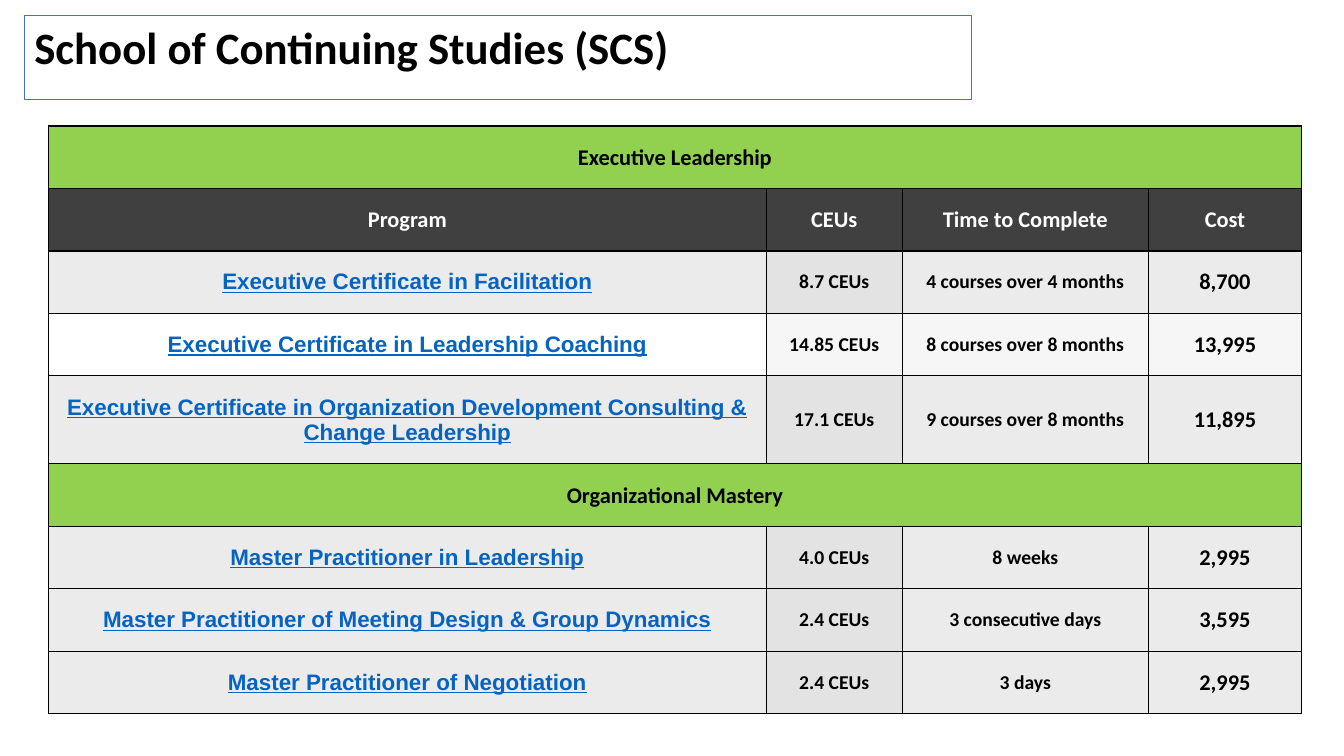
from dataclasses import dataclass

from lxml import etree
from pptx import Presentation
from pptx import util as u
from pptx.dml.color import RGBColor
from pptx.enum import text
from pptx.oxml import ns


@dataclass(frozen=True)
class Theme:
    body_font: str = "Calibri"
    link_font: str = "Arial"
    title_size: int = 32
    table_size: int = 16
    detail_size: int = 14
    ink: str = "000000"
    white: str = "FFFFFF"
    link: str = "0563C1"
    title_line: str = "4472C4"
    section: str = "92D050"
    header: str = "404040"
    band: str = "EBEBEB"
    band_ceus: str = "E3E3E3"
    light: str = "F6F6F6"


HEADERS = ("Program", "CEUs", "Time to Complete", "Cost")
LEADERSHIP = (
    ("Executive Certificate in Facilitation", "8.7 CEUs", "4 courses over 4 months", "8,700"),
    ("Executive Certificate in Leadership Coaching", "14.85 CEUs", "8 courses over 8 months", "13,995"),
    ("Executive Certificate in Organization Development Consulting & Change Leadership",
     "17.1 CEUs", "9 courses over 8 months", "11,895"),
)
MASTERY = (
    ("Master Practitioner in Leadership", "4.0 CEUs", "8 weeks", "2,995"),
    ("Master Practitioner of Meeting Design & Group Dynamics", "2.4 CEUs", "3 consecutive days", "3,595"),
    ("Master Practitioner of Negotiation", "2.4 CEUs", "3 days", "2,995"),
)
ROWS = (
    ("section", ("Executive Leadership",)),
    ("header", HEADERS),
    ("band", LEADERSHIP[0]),
    ("light", LEADERSHIP[1]),
    ("band", LEADERSHIP[2]),
    ("section", ("Organizational Mastery",)),
    *(("band", program) for program in MASTERY),
)
COLUMN_WIDTHS = (7.12, 1.35, 2.44, 1.52)
ROW_HEIGHT = 0.62
TALL_ROW_HEIGHT = 0.83
TALL_ROW = 4
CELL_MARGIN = 0.17


def write_text(frame, content, *, font, size, color, align, underline=False):
    paragraph = frame.paragraphs[0]
    paragraph.alignment = align
    run = paragraph.add_run()
    run.text = content
    run.font.name = font
    run.font.size = u.Pt(size)
    run.font.bold = True
    run.font.underline = underline
    run.font.color.rgb = RGBColor.from_string(color)


class ProgramSlide:
    def __init__(self, presentation, theme):
        self.theme = theme
        self.slide = presentation.slides.add_slide(presentation.slide_layouts[5])

    def title(self, content, left, top, width, height):
        shape = self.slide.shapes.title
        shape.left, shape.top = u.Inches(left), u.Inches(top)
        shape.width, shape.height = u.Inches(width), u.Inches(height)
        shape.line.color.rgb = RGBColor.from_string(self.theme.title_line)
        shape.line.width = u.Pt(0.75)
        frame = shape.text_frame
        frame.word_wrap = True
        frame.auto_size = text.MSO_AUTO_SIZE.SHAPE_TO_FIT_TEXT
        frame.vertical_anchor = text.MSO_ANCHOR.TOP
        write_text(frame, content, font=self.theme.body_font, size=self.theme.title_size,
                   color=self.theme.ink, align=text.PP_ALIGN.LEFT)

    def table(self, rows, left, top):
        heights = [TALL_ROW_HEIGHT if index == TALL_ROW else ROW_HEIGHT for index in range(len(rows))]
        table = self.slide.shapes.add_table(
            len(rows), len(COLUMN_WIDTHS), u.Inches(left), u.Inches(top),
            u.Inches(sum(COLUMN_WIDTHS)), u.Inches(sum(heights))).table
        table.first_row = table.horz_banding = False
        for column, width in zip(table.columns, COLUMN_WIDTHS):
            column.width = u.Inches(width)
        for row_index, (kind, values) in enumerate(rows):
            table.rows[row_index].height = u.Inches(heights[row_index])
            for column_index in range(len(COLUMN_WIDTHS)):
                self.cell_box(table.cell(row_index, column_index), kind, column_index)
            if kind == "section":
                table.cell(row_index, 0).merge(table.cell(row_index, len(COLUMN_WIDTHS) - 1))
            for column_index, value in enumerate(values):
                self.cell_text(table.cell(row_index, column_index), value, kind, column_index)

    def cell_box(self, cell, kind, column_index):
        properties = cell._tc.get_or_add_tcPr()
        for edge in ("lnL", "lnR", "lnT", "lnB"):
            line = etree.SubElement(properties, ns.qn(f"a:{edge}"), w=str(u.Pt(1)))
            fill = etree.SubElement(line, ns.qn("a:solidFill"))
            etree.SubElement(fill, ns.qn("a:srgbClr"), val=self.theme.ink)
        if kind == "light" and column_index == 0:
            cell.fill.background()
        else:
            color = getattr(self.theme, kind)
            if kind == "band" and column_index == 1:
                color = self.theme.band_ceus
            cell.fill.solid()
            cell.fill.fore_color.rgb = RGBColor.from_string(color)
        cell.margin_left = cell.margin_right = u.Inches(CELL_MARGIN)
        cell.margin_top = cell.margin_bottom = u.Inches(CELL_MARGIN)
        is_heading = kind in ("section", "header")
        cell.vertical_anchor = text.MSO_ANCHOR.BOTTOM if is_heading else text.MSO_ANCHOR.MIDDLE

    def cell_text(self, cell, value, kind, column_index):
        theme = self.theme
        is_program = kind in ("band", "light")
        is_link = is_program and column_index == 0
        is_detail = is_program and column_index in (1, 2)
        color = theme.white if kind == "header" else theme.ink
        write_text(cell.text_frame, value,
                   font=theme.link_font if is_link else theme.body_font,
                   size=theme.detail_size if is_detail else theme.table_size,
                   color=theme.link if is_link else color,
                   align=text.PP_ALIGN.CENTER, underline=is_link)


def main():
    presentation = Presentation()
    presentation.slide_width = u.Inches(13.33)
    presentation.slide_height = u.Inches(7.5)
    page = ProgramSlide(presentation, Theme())
    page.title("School of Continuing Studies (SCS)", 0.24, 0.15, 9.4, 0.64)
    page.table(ROWS, 0.48, 1.25)
    presentation.save("out.pptx")


if __name__ == "__main__":
    main()
